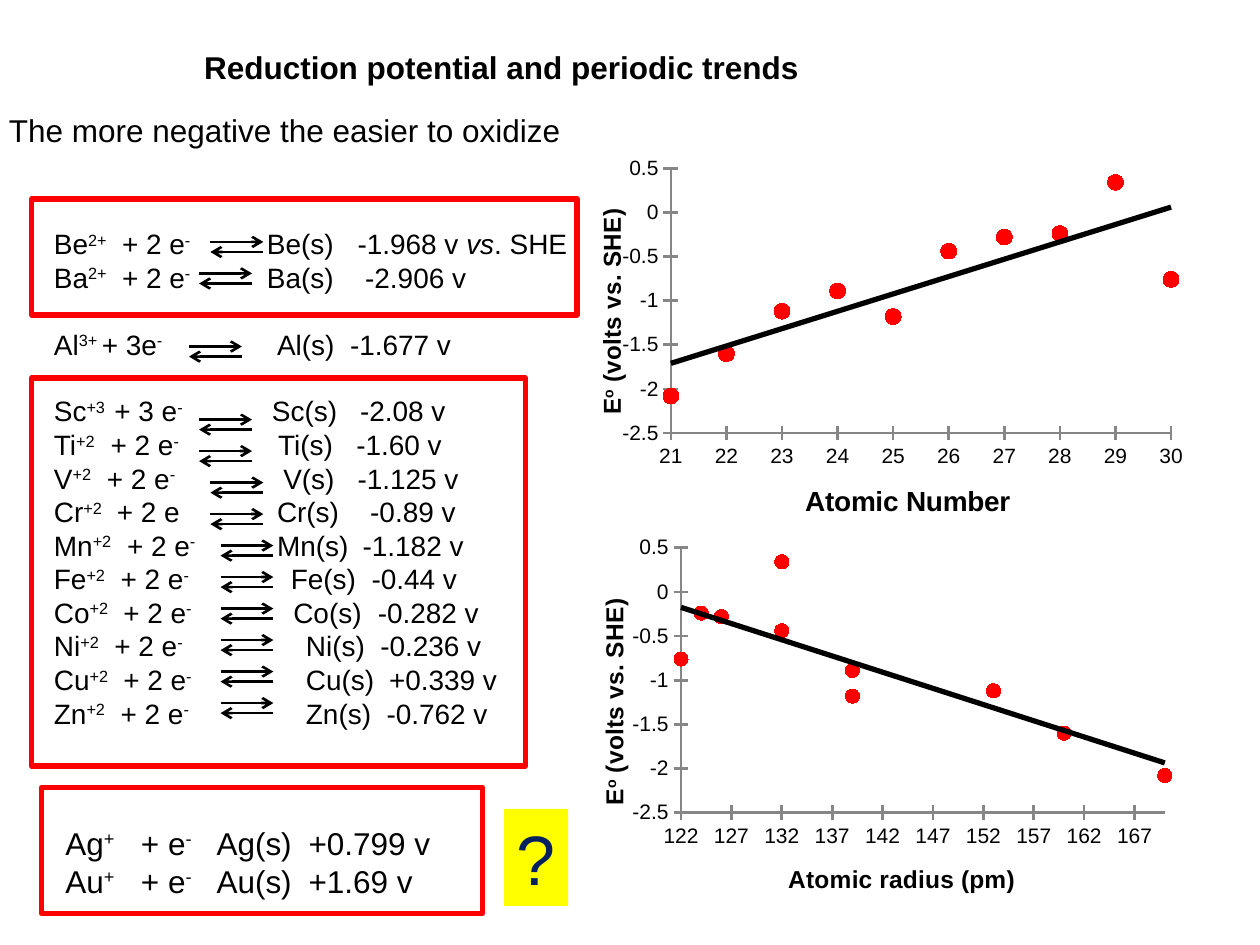
from lxml import etree
from pptx import Presentation
from pptx import util as u
from pptx.chart.data import XyChartData
from pptx.dml.color import RGBColor
from pptx.enum import chart as ch, shapes, text
from pptx.oxml import parse_xml
from pptx.oxml.ns import nsdecls, qn

Inches = u.Inches


def rgb(code):
    return RGBColor.from_string(code)


def put(frame, words, size=18, color="000000", bold=False, align=None,
        tabs=(), gap=0, first=True):
    """Write one paragraph; ^ encloses superscript, * encloses italic."""
    para = frame.paragraphs[0] if first else frame.add_paragraph()
    if tabs:
        stops = etree.SubElement(para._p.get_or_add_pPr(), qn("a:tabLst"))
        for stop in tabs:
            etree.SubElement(stops, qn("a:tab"), pos=str(Inches(stop)), algn="l")
    para.alignment = align
    if gap:
        para.space_before = u.Pt(gap)
    for i, part in enumerate(words.split("^")):
        for j, bit in enumerate(part.split("*")):
            if not bit:
                continue
            run = para.add_run()
            run.text = bit
            font = run.font
            font.name, font.size, font.bold = "Arial", u.Pt(size), bold
            font.color.rgb = rgb(color)
            if j % 2:
                font.italic = True
            if i % 2:
                font._element.set("baseline", "30000")


deck = Presentation()
deck.slide_width, deck.slide_height = Inches(10), Inches(7.5)
slide = deck.slides.add_slide(deck.slide_layouts[5])
parts = slide.shapes

# Title
title = parts.title
title.left, title.top = Inches(1.52), Inches(0.33)
title.width, title.height = Inches(5.12), Inches(0.4)
title.text_frame.auto_size = text.MSO_AUTO_SIZE.NONE
title.text_frame.word_wrap = False
title.text_frame.vertical_anchor = text.MSO_ANCHOR.TOP
put(title.text_frame, "Reduction potential and periodic trends", bold=True,
    align=text.PP_ALIGN.LEFT)

# Subtitle
note = parts.add_textbox(Inches(-0.05), Inches(0.83), Inches(4.62), Inches(0.4))
note.text_frame.word_wrap = False
put(note.text_frame, "The more negative the easier to oxidize",
    align=text.PP_ALIGN.CENTER)

# Half reactions: words, tab stops, space before, arrow left, arrow top
rows = [
    ("Be^2+^\t+ 2 e^-^\tBe(s)\t-1.968 v *vs*. SHE", (0.54, 1.69, 2.41), 0, 1.67, 1.92),
    ("Ba^2+^\t+ 2 e^-^\tBa(s)\t-2.906 v", (0.54, 1.69, 2.47), 0, 1.58, 2.17),
    ("Al^3+^\t+ 3e^-^\tAl(s)\t-1.677 v", (0.38, 1.77, 2.35), 19, 1.5, 2.75),
    ("Sc^+3^\t+ 3 e^-^\tSc(s)\t-2.08 v", (0.48, 1.73, 2.43), 19, 1.58, 3.33),
    ("Ti^+2^\t+ 2 e^-^\tTi(s)\t-1.60 v", (0.45, 1.78, 2.4), 0, 1.58, 3.58),
    ("V^+2^\t+ 2 e^-^\tV(s)\t-1.125 v", (0.42, 1.82, 2.41), 0, 1.67, 3.83),
    ("Cr^+2^\t+ 2 e\tCr(s)\t-0.89 v", (0.5, 1.77, 2.51), 0, 1.67, 4.08),
    ("Mn^+2^\t+ 2 e^-^\tMn(s)\t-1.182 v", (0.58, 1.77, 2.45), 0, 1.75, 4.33),
    ("Fe^+2^\t+ 2 e^-^\tFe(s)\t-0.44 v", (0.53, 1.88, 2.52), 0, 1.75, 4.58),
    ("Co^+2^\t+ 2 e^-^\tCo(s)\t-0.282 v", (0.55, 1.9, 2.57), 0, 1.75, 4.83),
    ("Ni^+2^\t+ 2 e^-^\tNi(s)\t-0.236 v", (0.48, 2, 2.59), 0, 1.75, 5.08),
    ("Cu^+2^\t+ 2 e^-^\tCu(s)\t+0.339 v", (0.55, 2, 2.66), 0, 1.75, 5.33),
    ("Zn^+2^\t+ 2 e^-^\tZn(s)\t-0.762 v", (0.53, 2, 2.64), 0, 1.75, 5.58),
]
list_box = parts.add_textbox(Inches(0.33), Inches(1.75), Inches(4.55), Inches(4.1))
list_box.text_frame.word_wrap = True
for n, (words, tabs, gap, left, top) in enumerate(rows):
    put(list_box.text_frame, words, size=16, tabs=tabs, gap=gap, first=n == 0)
    # Forward arrow above, back arrow below
    right = left + 0.42
    for start, end, y in ((left, right, top), (right, left, top + 0.08)):
        arrow = parts.add_connector(shapes.MSO_CONNECTOR.STRAIGHT, Inches(start),
                                    Inches(y), Inches(end), Inches(y))
        arrow.line.color.rgb = rgb("000000")
        arrow.line.width = u.Pt(1.5)
        etree.SubElement(arrow.line._get_or_add_ln(), qn("a:tailEnd"), type="arrow")
        etree.SubElement(arrow._element.spPr, qn("a:effectLst"))

# Noble metals
noble = parts.add_textbox(Inches(0.42), Inches(6.49), Inches(3.15), Inches(0.7))
noble.text_frame.word_wrap = True
for n, metal in enumerate(("Ag(s)\t+0.799 v", "Au(s)\t+1.69 v")):
    put(noble.text_frame, f"{metal[:2]}^+^\t+ e^-^\t{metal}",
        tabs=(0.6, 1.2, 1.93), first=n == 0)

# Scatter charts with linear trend
volts = [-2.08, -1.6, -1.12, -0.89, -1.18, -0.44, -0.28, -0.24, 0.34, -0.76]
plots = [
    dict(at=(4.5, 1.17), xs=range(21, 31), name="Atomic Number", size=16, dot=9,
         unit=1, plot=(0.165, 0.056, 0.794, 0.711), xpos=(0.37, 0.89), ypos=(0.04, 0.16)),
    dict(at=(4.52, 4.21), xs=[170, 160, 153, 139, 139, 132, 126, 124, 132, 122],
         name="Atomic radius (pm)", size=14, dot=8, unit=5,
         plot=(0.177, 0.046, 0.768, 0.701), xpos=(0.34, 0.87), ypos=(0.04, 0.17)),
]
for item in plots:
    data = XyChartData()
    dots = data.add_series("Series 1")
    for x, y in zip(item["xs"], volts):
        dots.add_data_point(x, y)
    left, top = item["at"]
    chart = parts.add_chart(ch.XL_CHART_TYPE.XY_SCATTER, Inches(left), Inches(top),
                            Inches(5), Inches(3), data).chart
    chart.has_legend = chart.has_title = False
    chart.font.name, chart.font.size = "Arial", u.Pt(10)
    chart.font.color.rgb = rgb("000000")
    chart.plots[0].vary_by_categories = False

    # Axes
    xaxis, yaxis = chart.category_axis, chart.value_axis
    for axis, low, high, step, name, size in (
            (xaxis, min(item["xs"]), max(item["xs"]), item["unit"], item["name"], item["size"]),
            (yaxis, -2.5, 0.5, 0.5, "E^o^ (volts vs. SHE)", 14)):
        axis.minimum_scale, axis.maximum_scale, axis.major_unit = low, high, step
        axis.has_major_gridlines = False
        axis.major_tick_mark = ch.XL_TICK_MARK.CROSS
        axis.minor_tick_mark = ch.XL_TICK_MARK.NONE
        axis.tick_label_position = ch.XL_TICK_LABEL_POSITION.LOW
        axis.crosses = ch.XL_AXIS_CROSSES.MINIMUM
        axis.tick_labels.font.size = u.Pt(12)
        axis.tick_labels.number_format = "General"
        axis.tick_labels.number_format_is_linked = False
        axis.format.line.color.rgb = rgb("868686")
        axis.format.line.width = u.Pt(1.5)
        put(axis.axis_title.text_frame, name, size=size, bold=True)
    yaxis.axis_title.text_frame._txBody.bodyPr.set("rot", "-5400000")
    yaxis.axis_title.text_frame._txBody.bodyPr.set("vert", "horz")

    # Place plot and axis titles
    area = chart._chartSpace.chart.plotArea
    for node, spot, place in ((area, 0, item["plot"]),
                              (xaxis.axis_title._element, 1, item["xpos"]),
                              (yaxis.axis_title._element, 1, item["ypos"])):
        for old in node.findall(qn("c:layout")):
            node.remove(old)
        frame = parse_xml(f"<c:layout {nsdecls('c')}><c:manualLayout/></c:layout>")
        if node is area:
            etree.SubElement(frame[0], qn("c:layoutTarget"), val="inner")
        for tag in ("xMode", "yMode"):
            etree.SubElement(frame[0], qn("c:" + tag), val="edge")
        for tag, part in zip("xywh", place):
            etree.SubElement(frame[0], qn("c:" + tag), val=str(part))
        node.insert(spot, frame)

    # Markers and trend line
    series = chart.plots[0].series[0]
    series.format.line.fill.background()
    series.marker.style = ch.XL_MARKER_STYLE.CIRCLE
    series.marker.size = item["dot"]
    series.marker.format.fill.solid()
    series.marker.format.fill.fore_color.rgb = rgb("FF0000")
    series.marker.format.line.color.rgb = rgb("FF0000")
    series._element.find(qn("c:xVal")).addprevious(parse_xml(
        f'<c:trendline {nsdecls("c", "a")}><c:spPr><a:ln w="38100"><a:solidFill>'
        '<a:srgbClr val="000000"/></a:solidFill></a:ln></c:spPr>'
        '<c:trendlineType val="linear"/><c:dispRSqr val="0"/><c:dispEq val="0"/>'
        '</c:trendline>'))

# Red frames and yellow question box
for box, tint in (((0.25, 3, 3.92, 3.08), None), ((0.25, 1.58, 4.33, 0.92), None),
                  ((0.33, 6.25, 3.5, 1), None), ((4, 6.42, 0.51, 0.77), "FFFF00")):
    rect = parts.add_shape(shapes.MSO_SHAPE.RECTANGLE, *map(Inches, box))
    rect.shadow.inherit = False
    if tint:
        rect.fill.solid()
        rect.fill.fore_color.rgb = rgb(tint)
        rect.line.fill.background()
        rect.text_frame.word_wrap = False
        put(rect.text_frame, "?", size=40, color="002060", align=text.PP_ALIGN.CENTER)
    else:
        rect.fill.background()
        rect.line.color.rgb = rgb("FF0000")
        rect.line.width = u.Pt(3)

deck.save("out.pptx")
